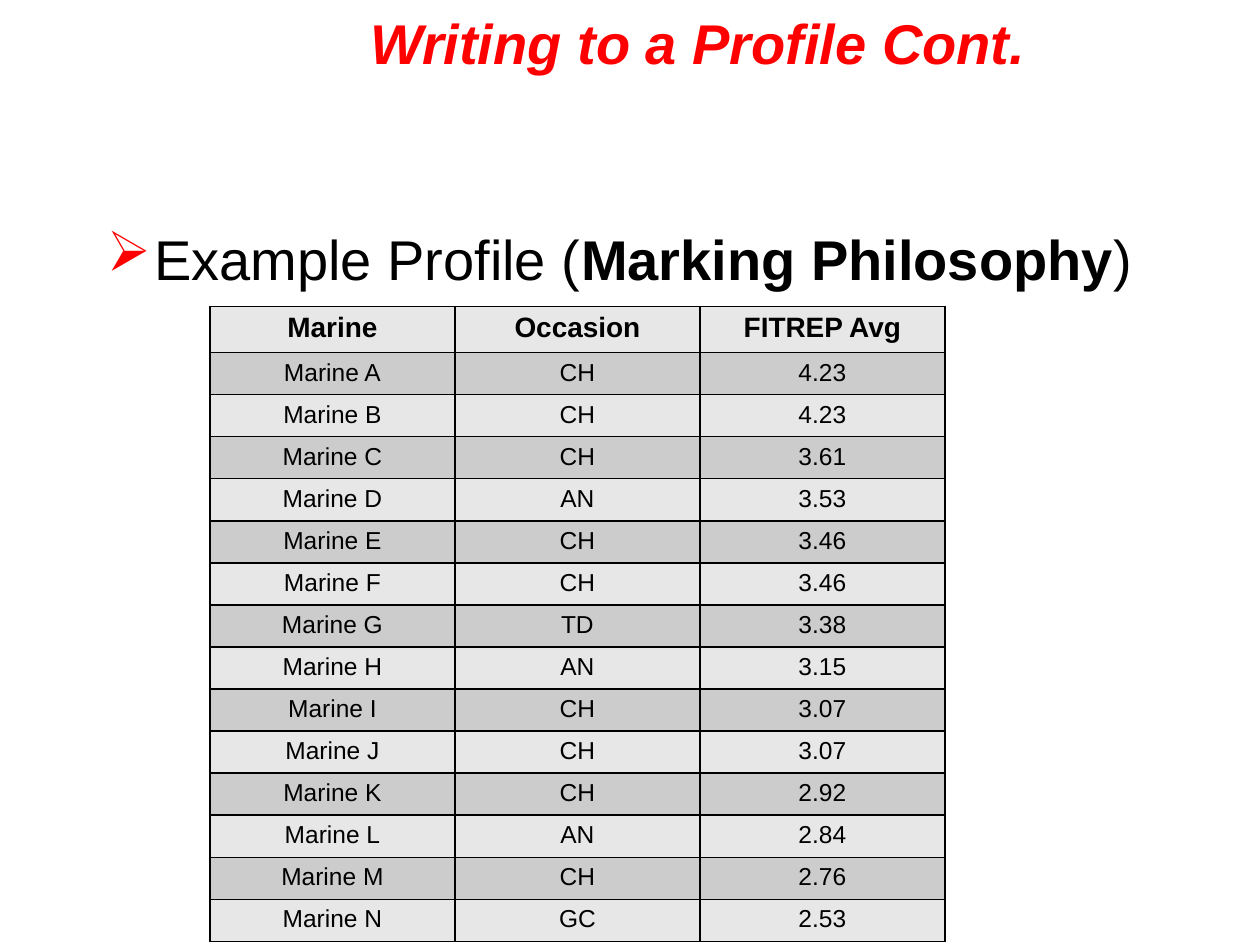
import pptx
import pptx.dml.color
import pptx.enum.text
import pptx.oxml
import pptx.oxml.ns
import pptx.util

Pt = pptx.util.Pt
RGBColor = pptx.dml.color.RGBColor
Align = pptx.enum.text.PP_ALIGN
Anchor = pptx.enum.text.MSO_ANCHOR

RED = RGBColor(0xFF, 0x00, 0x00)
BLACK = RGBColor(0x00, 0x00, 0x00)
LIGHT_GRAY = RGBColor(0xE7, 0xE7, 0xE7)
MID_GRAY = RGBColor(0xCC, 0xCC, 0xCC)
FONT = "Arial"

TITLE = "Writing to a Profile Cont."
HEADING = [("Example Profile (", False), ("Marking Philosophy", True), (")", False)]
HEADERS = ("Marine", "Occasion", "FITREP Avg")
REPORTS = [
    ("Marine A", "CH", "4.23"),
    ("Marine B", "CH", "4.23"),
    ("Marine C", "CH", "3.61"),
    ("Marine D", "AN", "3.53"),
    ("Marine E", "CH", "3.46"),
    ("Marine F", "CH", "3.46"),
    ("Marine G", "TD", "3.38"),
    ("Marine H", "AN", "3.15"),
    ("Marine I", "CH", "3.07"),
    ("Marine J", "CH", "3.07"),
    ("Marine K", "CH", "2.92"),
    ("Marine L", "AN", "2.84"),
    ("Marine M", "CH", "2.76"),
    ("Marine N", "GC", "2.53"),
]

TITLE_BOX = (132, 3, 534, 42)
HEADING_BOX = (54, 125, 612, 354)
TABLE_LEFT, TABLE_TOP = 120, 175
COLUMN_WIDTH, HEADER_HEIGHT, ROW_HEIGHT = 140, 26.4, 24
BULLET_INDENT = 27


def write_text(paragraph, runs, size, color=BLACK, italic=False, align=Align.LEFT):
    """Add (text, bold) runs to a paragraph."""
    paragraph.alignment = align
    for text, bold in runs:
        run = paragraph.add_run()
        run.text = text
        run.font.name = FONT
        run.font.size = Pt(size)
        run.font.bold = bold
        run.font.italic = italic
        run.font.color.rgb = color


def add_text_box(slide, box, anchor):
    frame = slide.shapes.add_textbox(*map(Pt, box)).text_frame
    frame.word_wrap = True
    frame.vertical_anchor = anchor
    return frame.paragraphs[0]


def add_xml(parent, xml):
    namespace = pptx.oxml.ns.nsdecls("a")
    parent.append(pptx.oxml.parse_xml(xml.replace(" NS", f" {namespace}", 1)))


def add_arrow_bullet(paragraph):
    properties = paragraph._p.get_or_add_pPr()
    properties.set("marL", str(Pt(BULLET_INDENT)))
    properties.set("indent", str(-Pt(BULLET_INDENT)))
    add_xml(properties, f'<a:buClr NS><a:srgbClr val="{RED}"/></a:buClr>')
    add_xml(properties, '<a:buChar NS char="➢"/>')


def format_cell(cell, fill):
    properties = cell._tc.get_or_add_tcPr()
    for side in ("lnL", "lnR", "lnT", "lnB"):
        add_xml(properties, f'<a:{side} NS w="{Pt(1)}"><a:solidFill>'
                            f'<a:srgbClr val="{BLACK}"/></a:solidFill></a:{side}>')
    cell.fill.solid()
    cell.fill.fore_color.rgb = fill


def add_report_table(slide):
    rows = [HEADERS, *REPORTS]
    table = slide.shapes.add_table(
        len(rows), len(HEADERS), Pt(TABLE_LEFT), Pt(TABLE_TOP),
        Pt(COLUMN_WIDTH * len(HEADERS)),
        Pt(HEADER_HEIGHT + ROW_HEIGHT * len(REPORTS))).table
    for column in table.columns:
        column.width = Pt(COLUMN_WIDTH)
    for r, values in enumerate(rows):
        is_header = r == 0
        table.rows[r].height = Pt(HEADER_HEIGHT if is_header else ROW_HEIGHT)
        for c, value in enumerate(values):
            cell = table.cell(r, c)
            format_cell(cell, MID_GRAY if r % 2 else LIGHT_GRAY)
            write_text(cell.text_frame.paragraphs[0], [(value, is_header)],
                       size=16 if is_header else 14, align=Align.CENTER)


def main():
    presentation = pptx.Presentation()
    presentation.slide_width, presentation.slide_height = Pt(720), Pt(540)
    slide = presentation.slides.add_slide(presentation.slide_layouts[6])

    title = add_text_box(slide, TITLE_BOX, Anchor.MIDDLE)
    write_text(title, [(TITLE, True)], size=32, color=RED, italic=True,
               align=Align.CENTER)

    heading = add_text_box(slide, HEADING_BOX, Anchor.TOP)
    add_arrow_bullet(heading)
    write_text(heading, HEADING, size=32)

    add_report_table(slide)
    presentation.save("out.pptx")


if __name__ == "__main__":
    main()
